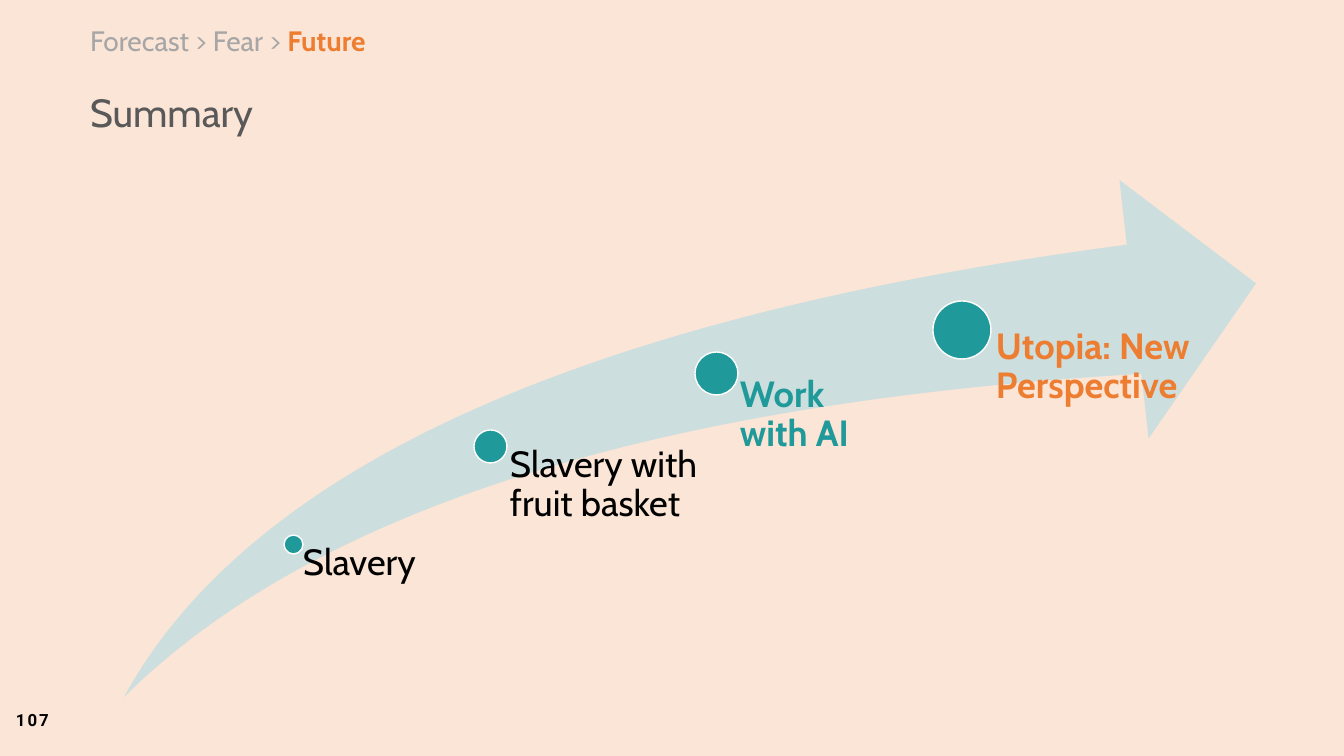
"""Builds the Summary slide: a rising arrow with four growing milestones."""
from dataclasses import dataclass

from pptx import Presentation
from pptx.dml.color import RGBColor
from pptx.enum.shapes import MSO_SHAPE
from pptx.enum.text import MSO_ANCHOR, PP_ALIGN
from pptx.util import Pt

PX = 12192000 / 1344


@dataclass(frozen=True)
class Theme:
    font: str = "Cabin"
    number_font: str = "Roboto"
    background: str = "FBE5D6"
    arrow: str = "CDDEDE"
    teal: str = "1F9999"
    orange: str = "ED7D31"
    title: str = "595959"
    muted: str = "A6A6A6"
    black: str = "000000"
    white: str = "FFFFFF"
    title_size: int = 28
    label_size: int = 26
    trail_size: int = 20
    number_size: int = 12


theme = Theme()


def add_shape(kind, bounds, color):
    shape = page.shapes.add_shape(kind, *[round(n * PX) for n in bounds])
    shape.shadow.inherit = False
    shape.fill.solid()
    shape.fill.fore_color.rgb = RGBColor.from_string(color)
    shape.line.fill.background()
    return shape


def add_text(bounds, runs, size, inset=0, margin=5, font=theme.font):
    box = page.shapes.add_textbox(*[round(n * PX) for n in bounds])
    frame = box.text_frame
    frame.word_wrap = True
    frame.margin_left, frame.margin_right = round(inset * PX), 0
    frame.margin_top = frame.margin_bottom = round(margin * PX)
    para = frame.paragraphs[0]
    para.line_spacing = 0.9
    for text, color, bold in runs:
        span = para.add_run()
        span.text = text
        span.font.name = font
        span.font.size = Pt(size)
        span.font.bold = bold
        span.font.color.rgb = RGBColor.from_string(color)
    return box


deck = Presentation()
deck.slide_width, deck.slide_height = round(1344 * PX), round(756 * PX)
page = deck.slides.add_slide(deck.slide_layouts[6])
page.background.fill.solid()
page.background.fill.fore_color.rgb = RGBColor.from_string(theme.background)

number = add_text((-3, 703, 52, 33), [("107", theme.black, True)],
                  theme.number_size, font=theme.number_font)
number.text_frame.vertical_anchor = MSO_ANCHOR.MIDDLE
number_para = number.text_frame.paragraphs[0]
number_para.alignment = PP_ALIGN.RIGHT
number_para.line_spacing = 1.0
number_para.runs[0].font._element.set("spc", "150")

add_text((90, 89, 1201, 68), [("Summary", theme.title, False)], theme.title_size)
add_text((90, 22, 910, 50),
         [("Forecast > Fear > ", theme.muted, False), ("Future", theme.orange, True)],
         theme.trail_size)

arrow = add_shape(MSO_SHAPE.SWOOSH_ARROW, (124, 180, 1132, 517), theme.arrow)
arrow.adjustments[0] = 0.25
arrow.adjustments[1] = 0.25

milestones = [
    ("Slavery", theme.black, False, (284, 535, 19), (293, 544, 141, 123), 10),
    ("Slavery with fruit basket", theme.black, False, (474, 430, 33), (498, 446, 233, 86), 12),
    ("Work with AI", theme.teal, True, (695, 352, 43), (717, 376, 173, 96), 23),
    ("Utopia: New Perspective", theme.orange, True, (933, 301, 58), (972, 328, 227, 103), 24),
]
for text, color, bold, (left, top, size), bounds, inset in milestones:
    dot = add_shape(MSO_SHAPE.OVAL, (left, top, size, size), theme.teal)
    dot.line.color.rgb = RGBColor.from_string(theme.white)
    dot.line.width = Pt(1)
    add_text(bounds, [(text, color, bold)], theme.label_size, inset, margin=0)

deck.save("out.pptx")
